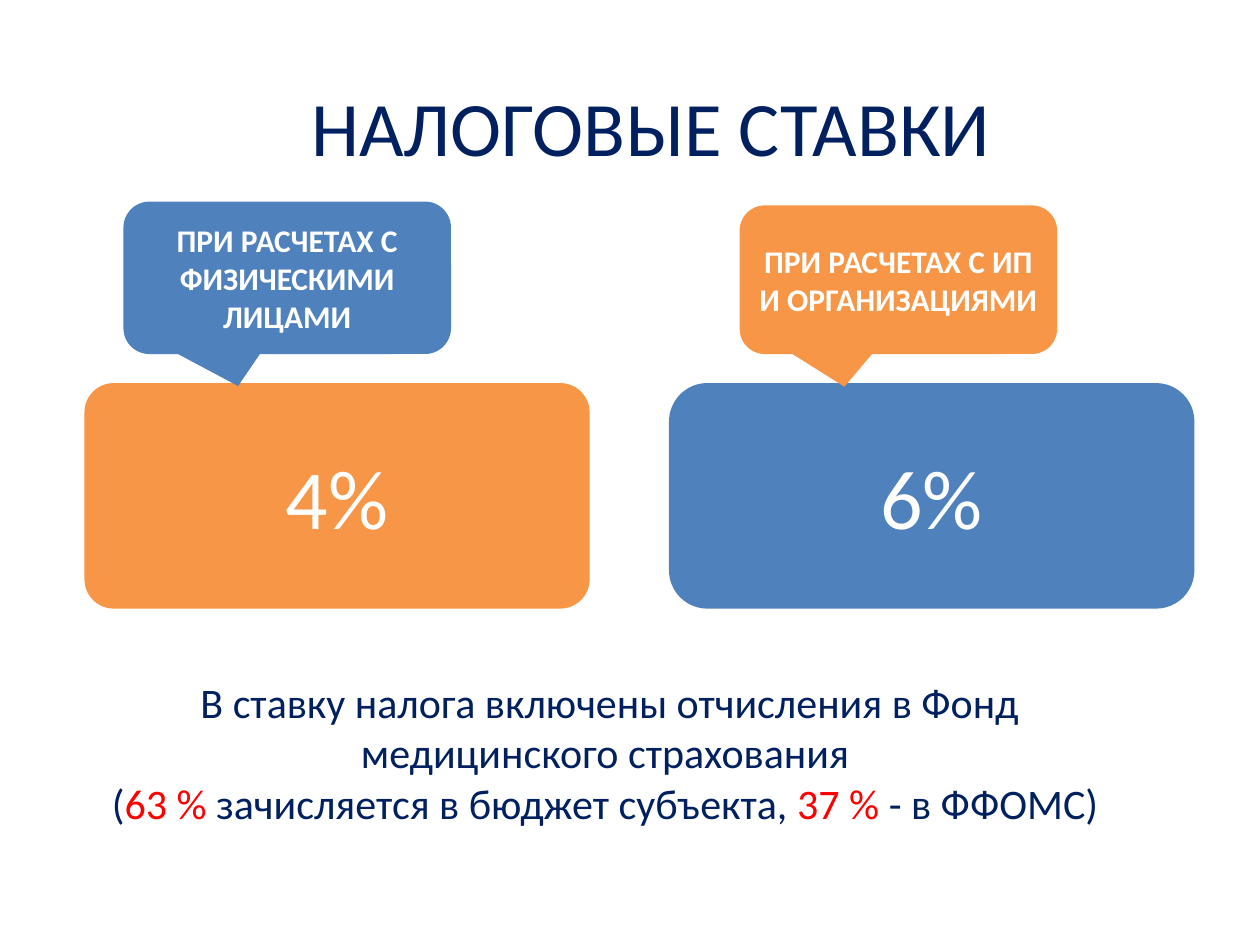
from pptx import Presentation
from pptx.dml.color import RGBColor
from pptx.enum.shapes import MSO_SHAPE as Shape
from pptx.enum.text import MSO_ANCHOR as Anchor, PP_ALIGN as Align
from pptx.util import Inches, Pt

NAVY, RED, WHITE = "002060", "FF0000", "FFFFFF"
BLUE, ORANGE = "4F81BD", "F79646"


def paint(color_format, hex_color):
    color_format.rgb = RGBColor.from_string(hex_color)


def write(shape, paragraphs, size, color=WHITE, bold=False, anchor=Anchor.MIDDLE):
    """Each paragraph is a list of (text, colour) runs; colour None means the default."""
    frame = shape.text_frame
    frame.word_wrap = True
    frame.vertical_anchor = anchor
    for index, runs in enumerate(paragraphs):
        paragraph = frame.paragraphs[0] if index == 0 else frame.add_paragraph()
        paragraph.alignment = Align.CENTER
        for text, run_color in runs:
            run = paragraph.add_run()
            run.text = text
            run.font.name = "Calibri"
            run.font.size = Pt(size)
            run.font.bold = bold
            paint(run.font.color, run_color or color)


deck = Presentation()
deck.slide_width, deck.slide_height = Inches(10), Inches(7.5)
slide = deck.slides.add_slide(deck.slide_layouts[6])
shapes = slide.shapes

title = shapes.add_textbox(Inches(0.67), Inches(0.37), Inches(9), Inches(1.25))
write(title, [[("НАЛОГОВЫЕ СТАВКИ", None)]], 44, color=NAVY)

rate_top, rate_height, callout_bottom = 3.04, 1.79, 2.81
# rate, left, width, corner, fill; payer, left, width, height, tail, fill
rates = [
    ("4%", 0.67, 4.01, 0.13, ORANGE,
     "ПРИ РАСЧЕТАХ С ФИЗИЧЕСКИМИ ЛИЦАМИ", 0.98, 2.6, 1.21, (-0.15, 0.71), BLUE),
    ("6%", 5.31, 4.17, 0.17, BLUE,
     "ПРИ РАСЧЕТАХ С ИП И ОРГАНИЗАЦИЯМИ", 5.87, 2.52, 1.18, (-0.17, 0.72), ORANGE),
]
for (rate, rate_left, rate_width, corner, rate_fill,
     payer, payer_left, payer_width, payer_height, tail, payer_fill) in rates:
    boxes = [
        (Shape.ROUNDED_RECTANGLE, rate_left, rate_top, rate_width, rate_height,
         (corner,), rate_fill, rate, 48, False),
        (Shape.ROUNDED_RECTANGULAR_CALLOUT, payer_left, callout_bottom - payer_height,
         payer_width, payer_height, (*tail, 0.17), payer_fill, payer, 18, True),
    ]
    for kind, left, top, width, height, adjustments, fill, text, size, bold in boxes:
        box = shapes.add_shape(kind, Inches(left), Inches(top), Inches(width), Inches(height))
        for index, value in enumerate(adjustments):
            box.adjustments[index] = value
        box.shadow.inherit = False
        box.fill.solid()
        paint(box.fill.fore_color, fill)
        box.line.fill.background()
        write(box, [[(text, None)]], size, bold=bold)

allocation = shapes.add_textbox(Inches(0.51), Inches(5.32), Inches(8.66), Inches(1.72))
write(allocation, [
    [("В ставку налога включены отчисления в Фонд медицинского страхования ", None)],
    [("(", None), ("63 %", RED), (" зачисляется в бюджет субъекта, ", None),
     ("37 %", RED), (" - в ФФОМС) ", None)],
], 24, color=NAVY, anchor=Anchor.TOP)

deck.save("out.pptx")
